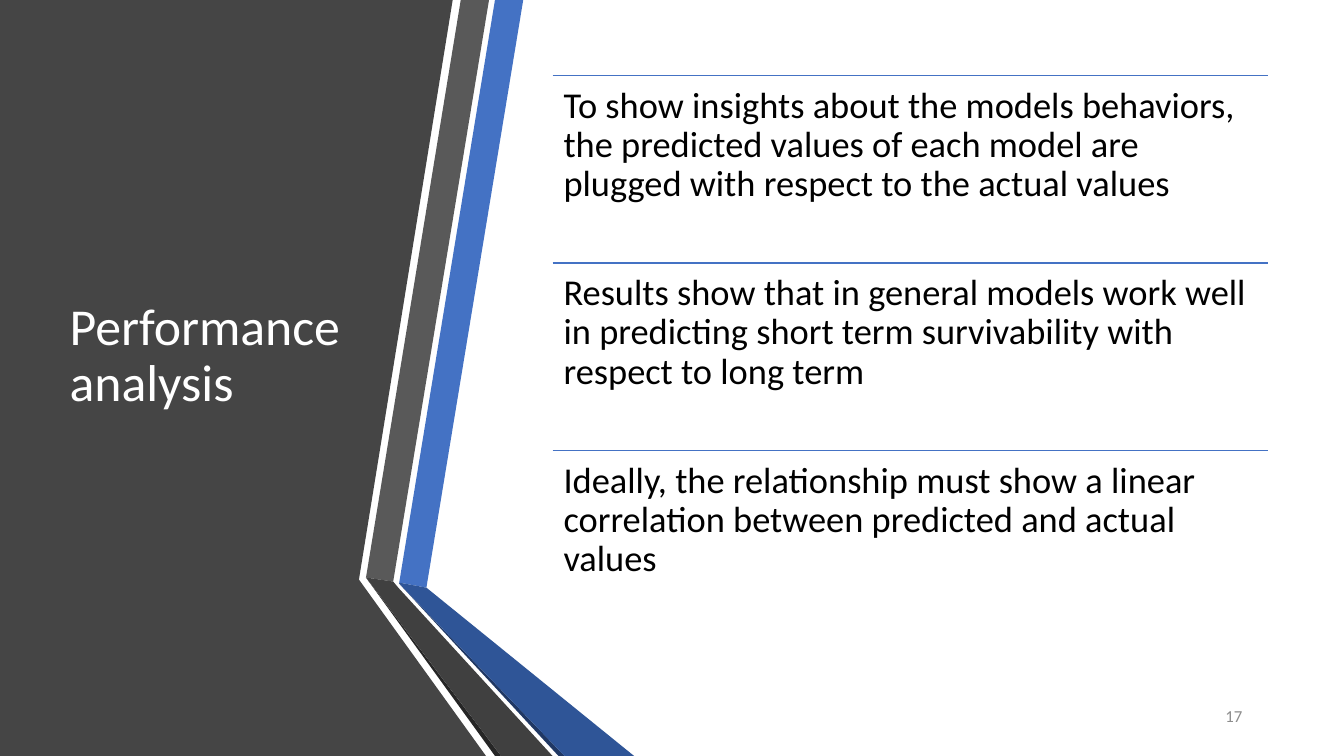
from lxml import etree
from pptx import Presentation
from pptx.dml.color import RGBColor
from pptx.enum.shapes import MSO_CONNECTOR
from pptx.enum.text import MSO_ANCHOR, MSO_AUTO_SIZE, PP_ALIGN
from pptx.oxml.ns import qn
from pptx.util import Inches, Pt

STRAIGHT = MSO_CONNECTOR.STRAIGHT
MIDDLE, TOP = MSO_ANCHOR.MIDDLE, MSO_ANCHOR.TOP
LEFT, RIGHT = PP_ALIGN.LEFT, PP_ALIGN.RIGHT
NO_FIT = MSO_AUTO_SIZE.NONE

COLORS = {
    "panel": "454545", "blue": "4472C4", "gray": "595959",
    "gray_edge": "262626", "blue_edge": "203864",
    "blue_fold": "2F5597", "gray_fold": "404040",
    "white": "FFFFFF", "black": "000000", "number": "8C8C8C",
}


def rgb(name):
    return RGBColor.from_string(COLORS[name])


def set_text(shape, text, size, color, align=LEFT, anchor=TOP):
    tf = shape.text_frame
    tf.word_wrap = True
    tf.auto_size = NO_FIT
    tf.vertical_anchor = anchor
    tf.text = text
    p = tf.paragraphs[0]
    p.alignment = align
    p.font.name = "Calibri"
    p.font.size = Pt(size)
    p.font.color.rgb = rgb(color)
    return tf


prs = Presentation()
prs.slide_width, prs.slide_height = Inches(13.33), Inches(7.5)
s = prs.slides.add_slide(prs.slide_layouts[5])

# Dark panel and folded ribbons, back to front
outlines = [
    ("panel", [(0, 0), (4.49, 0), (3.56, 5.75), (4.82, 7.5), (0, 7.5)]),
    ("blue", [(3.96, 5.78), (4.23, 5.83), (5.19, 0), (4.91, 0)]),
    ("gray", [(4.85, 0), (4.57, 0), (3.63, 5.73), (3.9, 5.77)]),
    ("gray_edge", [(3.63, 5.73), (4.91, 7.5), (4.97, 7.5)]),
    ("blue_edge", [(3.96, 5.79), (5.54, 7.5), (5.6, 7.5)]),
    ("blue_fold", [(3.96, 5.78), (3.96, 5.79), (5.6, 7.5), (6.29, 7.5),
                   (4.23, 5.83)]),
    ("gray_fold", [(3.63, 5.73), (4.97, 7.5), (5.48, 7.5), (3.95, 5.83),
                   (3.9, 5.77)]),
]
for color, corners in outlines:
    points = [(Inches(x), Inches(y)) for x, y in corners]
    builder = s.shapes.build_freeform(*points[0])
    builder.add_line_segments(points[1:], close=True)
    sp = builder.convert_to_shape()
    sp.shadow.inherit = False
    sp.fill.solid()
    sp.fill.fore_color.rgb = rgb(color)
    sp.line.fill.background()

# Title, brought in front of the panel
title = s.shapes.title
title.left, title.top = Inches(0.59), Inches(0.75)
title.width, title.height = Inches(3.04), Inches(5.58)
tf = set_text(title, "Performance analysis", 37, "white", anchor=MIDDLE)
tf.paragraphs[0].line_spacing = 0.9
s.shapes._spTree.append(title._element)

# Slide number
number = s.shapes.add_textbox(Inches(11.23), Inches(6.9), Inches(1.19), Inches(0.4))
tf = set_text(number, "17", 12, "number", RIGHT, MIDDLE)
tf.paragraphs[0].space_after = Pt(6)

# Statements, each under a rule
statements = [
    "To show insights about the models behaviors, the predicted values of "
    "each model are plugged with respect to the actual values",
    "Results show that in general models work well in predicting short term "
    "survivability with respect to long term",
    "Ideally, the relationship must show a linear correlation between "
    "predicted and actual values",
]
left, width, height = Inches(5.48), Inches(7.1), Inches(1.86)
for i, statement in enumerate(statements):
    top = Inches(0.75) + i * height
    rule = s.shapes.add_connector(STRAIGHT, left, top, left + width, top)
    rule.line.color.rgb = rgb("blue")
    rule.line.width = Pt(1)
    etree.SubElement(rule._element.spPr, qn("a:effectLst"))

    box = s.shapes.add_textbox(left, top, width, height)
    tf = set_text(box, statement, 26, "black")
    tf.margin_left = tf.margin_right = Inches(0.11)
    tf.margin_top = tf.margin_bottom = Inches(0.11)
    tf.paragraphs[0].line_spacing = 0.9

prs.save("out.pptx")
